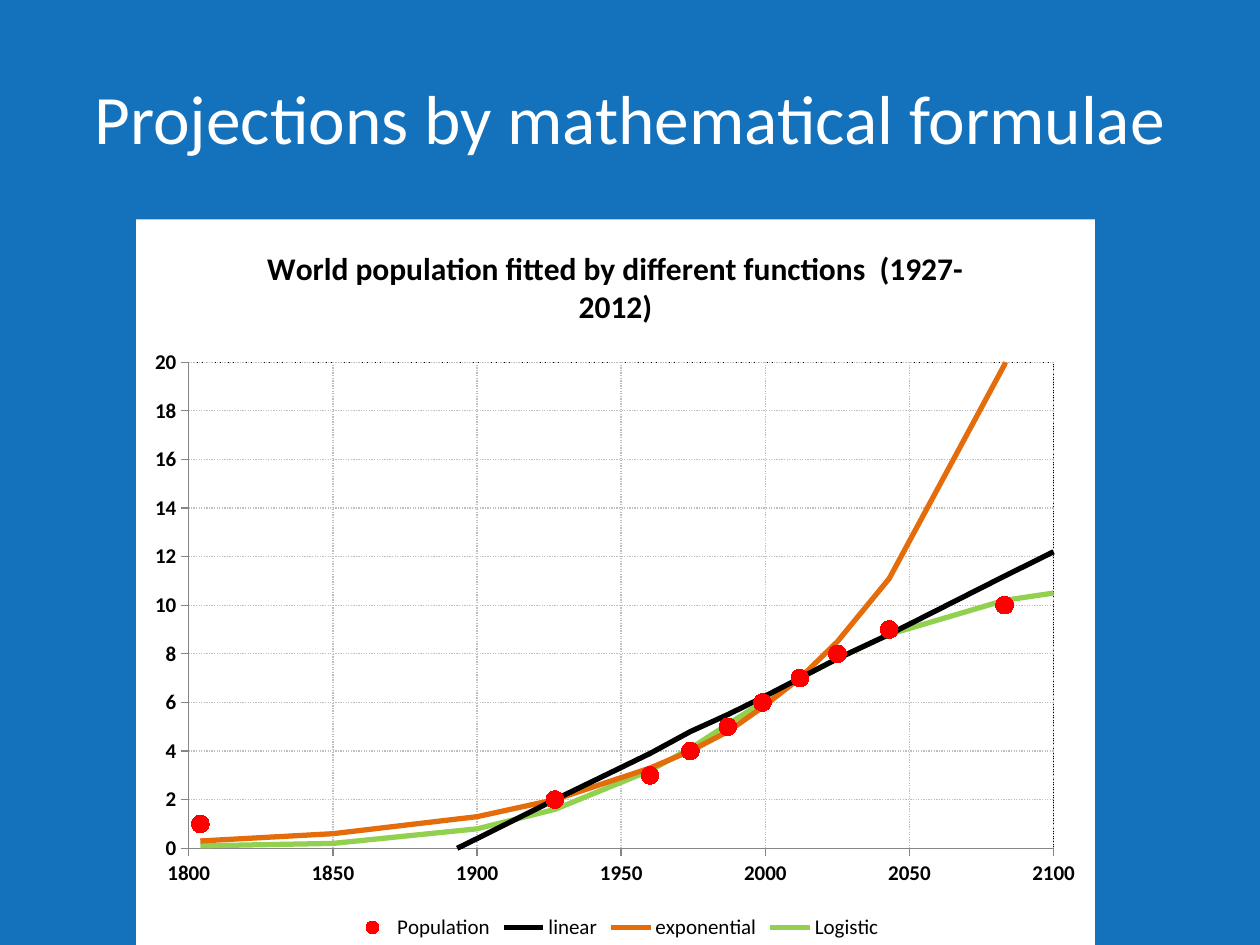
import pptx
import pptx.chart.data
import pptx.dml.color
import pptx.enum.chart
import pptx.enum.dml
import pptx.enum.text
import pptx.oxml
import pptx.util
from pptx.util import Inches

RGBColor = pptx.dml.color.RGBColor
BLUE = RGBColor(0x14, 0x72, 0xBC)
WHITE = RGBColor(0xFF, 0xFF, 0xFF)
BLACK = RGBColor(0, 0, 0)
RED = RGBColor(0xFF, 0, 0)
ORANGE = RGBColor(0xE4, 0x6C, 0x0A)
GREEN = RGBColor(0x92, 0xD0, 0x50)
GRID_GREY = RGBColor(0xBF, 0xBF, 0xBF)
AXIS_GREY = RGBColor(0x86, 0x86, 0x86)

CHART_NS = "http://schemas.openxmlformats.org/drawingml/2006/chart"
DRAWING_NS = "http://schemas.openxmlformats.org/drawingml/2006/main"

YEARS = [1804, 1850, 1900, 1927, 1960, 1974, 1987, 1999, 2012, 2025, 2043, 2083, 2100]
# Name, colour, billions of people in each of the years
CURVES = [
    ("Population", RED, [1, None, None, 2, 3, 4, 5, 6, 7, 8, 9, 10, None]),
    ("linear", BLACK, [-5.2, -2.5, 0.4, 2, 3.9, 4.8, 5.5, 6.2, 7, 7.8, 8.8, 11.2, 12.2]),
    ("exponential", ORANGE, [0.3, 0.6, 1.3, 2, 3.3, 4, 4.8, 5.8, 7, 8.5, 11.1, 19.9, 25.6]),
    ("Logistic", GREEN, [0.1, 0.2, 0.8, 1.6, 3.2, 4.1, 5.1, 6, 7, 7.8, 8.8, 10.2, 10.5]),
]


def set_font(font, size, color=BLACK, bold=False):
    values = {"name": "Calibri", "size": pptx.util.Pt(size), "bold": bold}
    for name, value in values.items():
        setattr(font, name, value)
    font.color.rgb = color


def add_heading(slide, words):
    heading = slide.shapes.title
    place = {"left": 0.5, "top": 0.3, "width": 9, "height": 1.25}
    for name, value in place.items():
        setattr(heading, name, Inches(value))
    frame = heading.text_frame
    frame.text = words
    frame.vertical_anchor = pptx.enum.text.MSO_ANCHOR.MIDDLE
    frame.paragraphs[0].alignment = pptx.enum.text.PP_ALIGN.CENTER
    set_font(frame.paragraphs[0].runs[0].font, 39.6, WHITE)


def format_axis(axis, low, high, step):
    values = {
        "minimum_scale": low,
        "maximum_scale": high,
        "major_unit": step,
        "has_major_gridlines": True,
        "major_tick_mark": pptx.enum.chart.XL_TICK_MARK.OUTSIDE,
        "minor_tick_mark": pptx.enum.chart.XL_TICK_MARK.NONE,
    }
    for name, value in values.items():
        setattr(axis, name, value)
    set_font(axis.tick_labels.font, 12, bold=True)
    axis.tick_labels.number_format = "General"
    axis.tick_labels.number_format_is_linked = False
    axis.format.line.color.rgb = AXIS_GREY
    grid = axis.major_gridlines.format.line
    grid.color.rgb = GRID_GREY
    grid.width = pptx.util.Pt(0.75)
    grid.dash_style = pptx.enum.dml.MSO_LINE.ROUND_DOT


def format_curves(plot):
    plot.vary_by_categories = False
    for series, (name, color, _) in zip(plot.series, CURVES):
        series.smooth = False
        marker = series.marker
        if name == "Population":
            series.format.line.fill.background()
            marker.style = pptx.enum.chart.XL_MARKER_STYLE.CIRCLE
            marker.size = 10
            marker.format.fill.solid()
            marker.format.fill.fore_color.rgb = color
            marker.format.line.color.rgb = color
        else:
            series.format.line.color.rgb = color
            series.format.line.width = pptx.util.Pt(3)
            marker.style = pptx.enum.chart.XL_MARKER_STYLE.NONE


def clear_missing_values(chart):
    # Years without a count keep their place but hold no value
    for point in list(chart._chartSpace.iter(f"{{{CHART_NS}}}pt")):
        if point.findtext(f"{{{CHART_NS}}}v") in ("None", ""):
            point.getparent().remove(point)


def shape_properties(fill, line):
    return pptx.oxml.parse_xml(
        f'<c:spPr xmlns:c="{CHART_NS}" xmlns:a="{DRAWING_NS}">{fill}{line}</c:spPr>')


def format_areas(chart):
    # Plot area: fixed place and dotted frame
    plot_area = chart._chartSpace.chart.plotArea
    for layout in plot_area.findall(f"{{{CHART_NS}}}layout"):
        plot_area.remove(layout)
    sizes = {"x": 0.055, "y": 0.197, "w": 0.902, "h": 0.67}
    parts = '<c:layoutTarget val="inner"/><c:xMode val="edge"/><c:yMode val="edge"/>'
    parts += "".join(f'<c:{name} val="{value}"/>' for name, value in sizes.items())
    plot_area.insert(0, pptx.oxml.parse_xml(
        f'<c:layout xmlns:c="{CHART_NS}"><c:manualLayout>{parts}</c:manualLayout></c:layout>'))
    plot_area.append(shape_properties(
        "<a:noFill/>",
        f'<a:ln w="9525"><a:solidFill><a:srgbClr val="{BLACK}"/></a:solidFill>'
        '<a:prstDash val="sysDot"/></a:ln>'))
    # Chart area: white without a frame
    chart._chartSpace.chart.addnext(shape_properties(
        f'<a:solidFill><a:srgbClr val="{WHITE}"/></a:solidFill>',
        "<a:ln><a:noFill/></a:ln>"))


def add_population_chart(slide):
    data = pptx.chart.data.XyChartData()
    for name, _, billions in CURVES:
        series = data.add_series(name)
        for year, value in zip(YEARS, billions):
            series.add_data_point(year, value)
    chart = slide.shapes.add_chart(
        pptx.enum.chart.XL_CHART_TYPE.XY_SCATTER,
        Inches(1.08), Inches(1.74), Inches(7.61), Inches(5.76), data).chart
    clear_missing_values(chart)
    set_font(chart.font, 10)

    # Title and legend
    chart.has_title = True
    title = chart.chart_title.text_frame
    title.text = "World population fitted by different functions  (1927-2012)"
    set_font(title.paragraphs[0].runs[0].font, 18, bold=True)
    chart.has_legend = True
    chart.legend.position = pptx.enum.chart.XL_LEGEND_POSITION.BOTTOM
    chart.legend.include_in_layout = False
    set_font(chart.legend.font, 12)

    format_axis(chart.category_axis, 1800, 2100, 50)
    format_axis(chart.value_axis, 0, 20, 2)
    format_curves(chart.plots[0])
    format_areas(chart)


def main():
    deck = pptx.Presentation()
    deck.slide_width, deck.slide_height = Inches(10), Inches(7.5)
    slide = deck.slides.add_slide(deck.slide_layouts[5])
    slide.background.fill.solid()
    slide.background.fill.fore_color.rgb = BLUE
    add_heading(slide, "Projections by mathematical formulae")
    add_population_chart(slide)
    deck.save("out.pptx")


if __name__ == "__main__":
    main()
